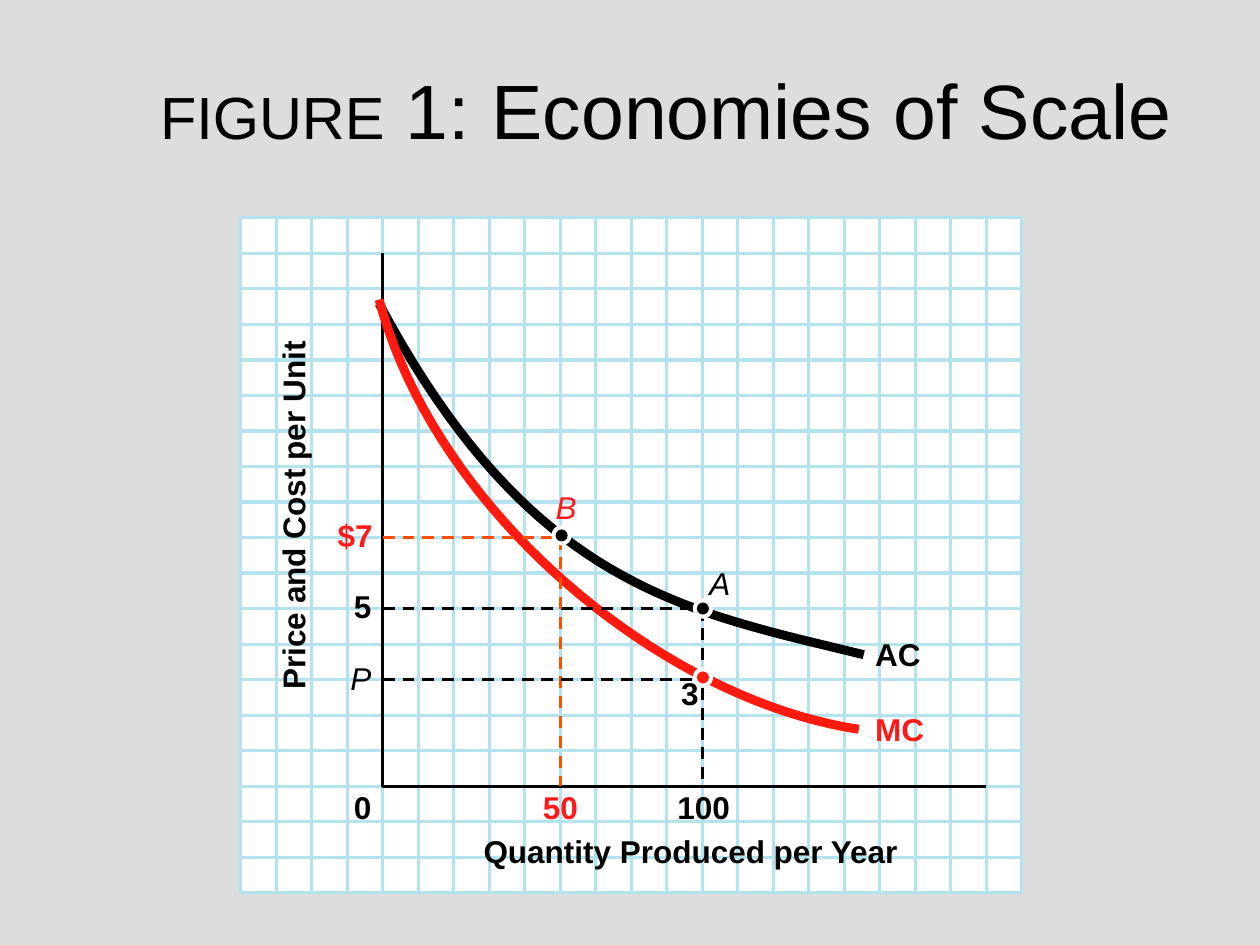
from lxml import etree
from pptx import Presentation
from pptx.dml.color import RGBColor
from pptx.enum.shapes import MSO_CONNECTOR, MSO_SHAPE
from pptx.enum.text import MSO_ANCHOR, PP_ALIGN
from pptx.oxml.ns import qn
from pptx.util import Inches, Pt

STRAIGHT = MSO_CONNECTOR.STRAIGHT
RECT, OVAL = MSO_SHAPE.RECTANGLE, MSO_SHAPE.OVAL
MIDDLE, CENTER = MSO_ANCHOR.MIDDLE, PP_ALIGN.CENTER

BLACK, WHITE, PAPER = "000000", "FFFFFF", "DDDDDD"
GRID, RED, CURVE_RED, ORANGE = "B3E3EE", "FF1919", "FE1A0E", "FF4D00"
FONT = "Arial"
LEFT, TOP, CELL = 1.91, 1.73, 0.2818
COLS, ROWS = 22, 19
ORIGIN_COL, ORIGIN_ROW = 4, 16
THIN, THICK = 1.75, 5.13
CURVE_STEPS = 40

AC_CURVE = [(3.9, 2.41), (8.16, 10.39), (12.48, 11.06), (17.55, 12.3)]
MC_CURVE = [(3.9, 2.3), (5.5, 8.33), (11.91, 13.58), (17.41, 14.4)]

GUIDES = [
    (ORIGIN_COL, 11, 13, 11, BLACK),
    (13, 11, 13, ORIGIN_ROW, BLACK),
    (ORIGIN_COL, 9, 9, 9, ORANGE),
    (9, 9, 9, ORIGIN_ROW, ORANGE),
    (ORIGIN_COL, 13, 13, 13, BLACK),
]
POINTS = [(13.02, 11, BLACK), (9.04, 8.94, BLACK), (13.02, 12.94, CURVE_RED)]
BOLD_LABELS = [
    ("AC", 17.87, 11.74, 1.52, BLACK),
    ("MC", 17.87, 13.87, 1.63, RED),
    ("Quantity Produced per Year", 6.84, 17.3, 12, BLACK),
    ("100", 12.3, 16.06, 1.74, BLACK),
    ("50", 8.51, 16.06, 1.24, RED),
    ("0", 3.19, 16.06, 0.74, BLACK),
    ("5", 3.19, 10.39, 0.74, BLACK),
    ("$7", 2.73, 8.4, 1.24, RED),
    ("3", 12.41, 12.84, 0.74, BLACK),
]
ITALIC_LABELS = [
    ("A", 13.2, 9.75, 0.85, BLACK),
    ("B", 8.87, 7.62, 0.85, RED),
    ("P", 3.09, 12.41, 0.85, BLACK),
]


def rgb(value):
    return RGBColor.from_string(value)


def span(cells):
    return Inches(cells * CELL)


def at_col(col):
    return Inches(LEFT + col * CELL)


def at_row(row):
    return Inches(TOP + row * CELL)


def style_line(line, color, width):
    line.color.rgb = rgb(color)
    line.width = Pt(width)


def style_run(r, size, color, bold=None, italic=None):
    r.font.name = FONT
    r.font.size = Pt(size)
    r.font.color.rgb = rgb(color)
    r.font.bold = bold
    r.font.italic = italic


def add_title(slide, prs):
    sp = slide.shapes.title
    sp.left, sp.top = int(prs.slide_width * 0.025), int(prs.slide_height * 0.032)
    sp.width, sp.height = int(prs.slide_width * 0.958), int(prs.slide_height * 0.167)
    tf = sp.text_frame
    tf.vertical_anchor = MIDDLE
    p = tf.paragraphs[0]
    p.alignment = CENTER
    p._p.get_or_add_pPr().set("indent", str(Inches(0.5)))
    for text, size in (("FIGURE", 34), (" 1: Economies of Scale", 44)):
        r = p.add_run()
        r.text = text
        style_run(r, size, "010000")


def add_line(shapes, x1, y1, x2, y2, color):
    sp = shapes.add_connector(STRAIGHT, at_col(x1), at_row(y1), at_col(x2), at_row(y2))
    style_line(sp.line, color, THIN)
    etree.SubElement(sp._element.spPr, qn("a:effectLst"))
    return sp


def add_guide(shapes, x1, y1, x2, y2, color):
    sp = add_line(shapes, x1, y1, x2, y2, color)
    dash = etree.SubElement(sp._element.spPr.find(qn("a:ln")), qn("a:custDash"))
    etree.SubElement(dash, qn("a:ds"), d="390000", sp="255000")


def add_grid(shapes):
    sp = shapes.add_shape(RECT, at_col(0), at_row(0), span(COLS), span(ROWS))
    sp.shadow.inherit = False
    sp.fill.solid()
    sp.fill.fore_color.rgb = rgb(WHITE)
    style_line(sp.line, GRID, THIN)
    for row in range(1, ROWS):
        add_line(shapes, 0, row, COLS, row, GRID)
    for col in range(1, COLS):
        add_line(shapes, col, 0, col, ROWS, GRID)


def add_outline(shapes, points, color, width):
    start, *rest = [(at_col(x), at_row(y)) for x, y in points]
    builder = shapes.build_freeform(*start)
    builder.add_line_segments(rest, close=False)
    sp = builder.convert_to_shape()
    sp.shadow.inherit = False
    sp.fill.background()
    style_line(sp.line, color, width)


def bezier(controls):
    points = []
    for step in range(CURVE_STEPS + 1):
        t = step / CURVE_STEPS
        u = 1 - t
        weights = (u**3, 3 * u * u * t, 3 * u * t * t, t**3)
        points.append([sum(w * v for w, v in zip(weights, axis)) for axis in zip(*controls)])
    return points


def add_point(shapes, x, y, color):
    for size, fill in ((0.57, WHITE), (0.34, color)):
        sp = shapes.add_shape(OVAL, at_col(x - size / 2), at_row(y - size / 2), span(size), span(size))
        sp.shadow.inherit = False
        sp.fill.solid()
        sp.fill.fore_color.rgb = rgb(fill)
        sp.line.fill.background()


def add_label(shapes, text, x, y, width, color, italic=False):
    sp = shapes.add_textbox(at_col(x), at_row(y), span(width), Inches(0.3))
    tf = sp.text_frame
    tf.margin_left = tf.margin_right = tf.margin_top = tf.margin_bottom = 0
    tf.word_wrap = False
    tf.text = text
    style_run(tf.paragraphs[0].runs[0], 18, color, bold=not italic, italic=italic)
    return sp


def main():
    prs = Presentation()
    prs.slide_width, prs.slide_height = Inches(10), Inches(7.5)
    slide = prs.slides.add_slide(prs.slide_layouts[5])
    slide.background.fill.solid()
    slide.background.fill.fore_color.rgb = rgb(PAPER)
    add_title(slide, prs)

    shapes = slide.shapes.add_group_shape().shapes
    add_grid(shapes)
    axes = [(ORIGIN_COL, 1), (ORIGIN_COL, ORIGIN_ROW), (COLS - 1, ORIGIN_ROW)]
    add_outline(shapes, axes, BLACK, THIN)
    add_outline(shapes, bezier(AC_CURVE), BLACK, THICK)
    add_outline(shapes, bezier(MC_CURVE), CURVE_RED, THICK)
    for guide in GUIDES:
        add_guide(shapes, *guide)
    for point in POINTS:
        add_point(shapes, *point)
    for label in BOLD_LABELS:
        add_label(shapes, *label)
    for label in ITALIC_LABELS:
        add_label(shapes, *label, italic=True)
    add_label(shapes, "Price and Cost per Unit", -3.55, 7.73, 10.04, BLACK).rotation = 270
    prs.save("out.pptx")


if __name__ == "__main__":
    main()
